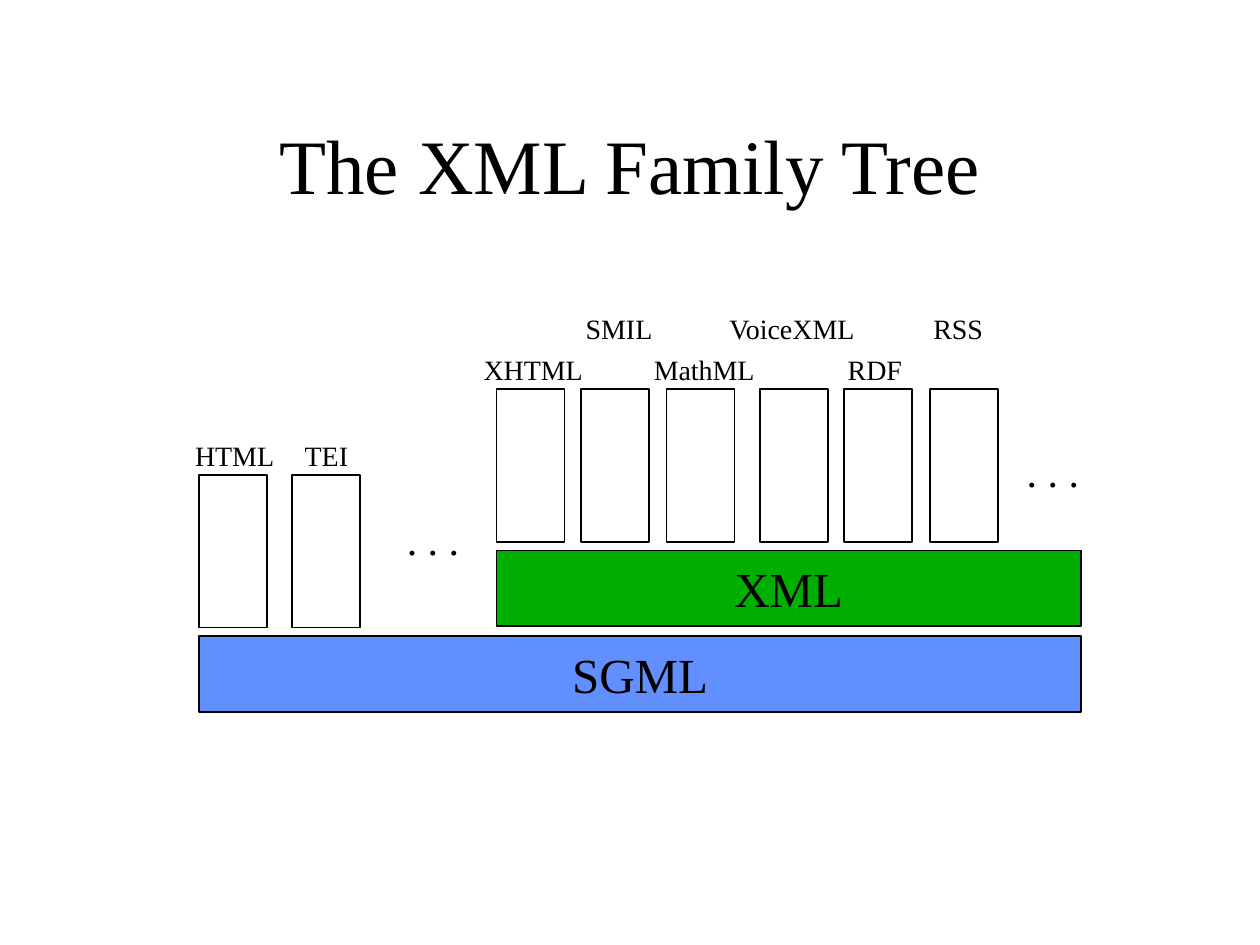
from dataclasses import dataclass

from pptx import Presentation
from pptx.dml.color import RGBColor as Color
from pptx.enum.shapes import MSO_SHAPE as Shape
from pptx.enum.text import MSO_ANCHOR as Anchor, MSO_AUTO_SIZE as AutoSize, PP_ALIGN as Align
from pptx.util import Inches, Pt


@dataclass(frozen=True)
class Theme:
    font: str = "Times New Roman"
    ink: str = "000000"
    paper: str = "FFFFFF"
    sgml: str = "618FFD"
    xml: str = "00AE00"
    title: int = 44
    base: int = 28
    dots: int = 24
    label: int = 16
    line: int = 1


THEME = Theme()
COLUMN_WIDTH, COLUMN_HEIGHT = 0.54, 1.21
LABEL_HEIGHT, LABEL_RISE, LABEL_STEP = 0.37, 0.34, 0.33
DOTS_HEIGHT = 0.5

# Column left, label text, label left, label width, label level
SGML_COLUMNS = [
    (1.58, "HTML", 1.45, 0.84, 0),
    (2.32, "TEI", 2.32, 0.55, 0),
]
XML_COLUMNS = [
    (3.94, "XHTML", 3.74, 1.00, 0),
    (4.61, "SMIL", 4.55, 0.74, 1),
    (5.29, "MathML", 5.09, 1.01, 0),
    (6.03, "VoiceXML", 5.69, 1.21, 1),
    (6.70, "RDF", 6.63, 0.64, 0),
    (7.38, "RSS", 7.31, 0.60, 1),
]


def write(shape, text, *, size, align=Align.CENTER, anchor=Anchor.MIDDLE, wrap=False, grow=False):
    frame = shape.text_frame
    frame.word_wrap = wrap
    frame.auto_size = AutoSize.SHAPE_TO_FIT_TEXT if grow else AutoSize.NONE
    frame.vertical_anchor = anchor
    para = frame.paragraphs[0]
    para.alignment = align
    span = para.add_run()
    span.text = text
    span.font.name = THEME.font
    span.font.size = Pt(size)
    span.font.color.rgb = Color.from_string(THEME.ink)


def add_text(page, box, text, **style):
    write(page.shapes.add_textbox(*map(Inches, box)), text, **style)


def add_label(page, box, text, size):
    add_text(page, box, text, size=size, align=Align.LEFT, anchor=Anchor.TOP, grow=True)


def add_block(page, box, fill):
    block = page.shapes.add_shape(Shape.RECTANGLE, *map(Inches, box))
    block.shadow.inherit = False
    block.fill.solid()
    block.fill.fore_color.rgb = Color.from_string(fill)
    block.line.color.rgb = Color.from_string(THEME.ink)
    block.line.width = Pt(THEME.line)
    return block


def add_base(page, box, name, fill):
    write(add_block(page, box, fill), name, size=THEME.base)


def add_columns(page, top, columns):
    for left, name, label_left, label_width, level in columns:
        add_block(page, (left, top, COLUMN_WIDTH, COLUMN_HEIGHT), THEME.paper)
        label_top = top - LABEL_RISE - level * LABEL_STEP
        add_label(page, (label_left, label_top, label_width, LABEL_HEIGHT), name, THEME.label)


def add_dots(page, left, top, width):
    add_label(page, (left, top, width, DOTS_HEIGHT), ". . .", THEME.dots)


def main():
    deck = Presentation()
    deck.slide_width, deck.slide_height = Inches(10), Inches(7.5)
    page = deck.slides.add_slide(deck.slide_layouts[6])

    # Title
    add_text(page, (0.75, 0.67, 8.5, 1.25), "The XML Family Tree", size=THEME.title, wrap=True)

    # SGML and the languages that stand on it
    add_base(page, (1.58, 5.05, 7, 0.6), "SGML", THEME.sgml)
    add_columns(page, 3.77, SGML_COLUMNS)
    add_dots(page, 3.13, 4.03, 0.62)

    # XML and the languages that stand on it
    add_base(page, (3.94, 4.37, 4.64, 0.6), "XML", THEME.xml)
    add_columns(page, 3.09, XML_COLUMNS)
    add_dots(page, 8.05, 3.49, 0.7)

    deck.save("out.pptx")


if __name__ == "__main__":
    main()
